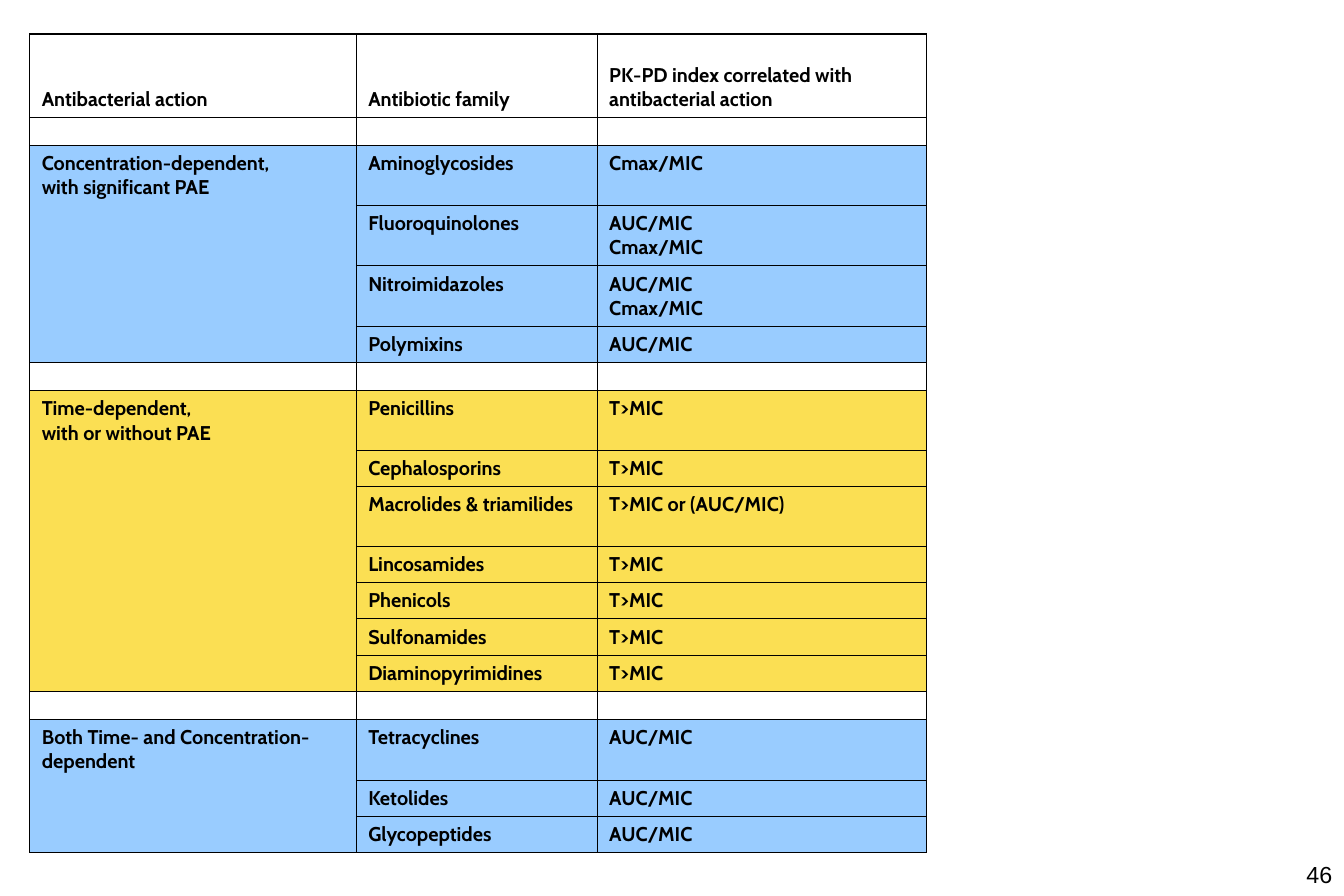
"""Build a slide with a table of antibiotic families and their PK-PD indices."""
import pptx
import pptx.util
import pptx.dml.color
import pptx.enum.text
import pptx.oxml.ns
import lxml.etree

PX = pptx.util.Inches(1) // 120
BLACK = pptx.dml.color.RGBColor(0x00, 0x00, 0x00)
BLUE = pptx.dml.color.RGBColor(0x99, 0xCC, 0xFF)
YELLOW = pptx.dml.color.RGBColor(0xFB, 0xDF, 0x53)

HEADER, SPACER, TALL, SHORT = 84, 28, 60, 36
COL_WIDTHS = [328, 242, 331]
HEADINGS = ["Antibacterial action", "Antibiotic family",
            "PK-PD index correlated with antibacterial action"]
GROUPS = [
    ("Concentration-dependent,\nwith significant PAE", BLUE, [
        ("Aminoglycosides", "Cmax/MIC", TALL),
        ("Fluoroquinolones", "AUC/MIC\nCmax/MIC", TALL),
        ("Nitroimidazoles", "AUC/MIC\nCmax/MIC", TALL),
        ("Polymixins", "AUC/MIC", SHORT),
    ]),
    ("Time-dependent,\nwith or without PAE", YELLOW, [
        ("Penicillins", "T>MIC", TALL),
        ("Cephalosporins", "T>MIC", SHORT),
        ("Macrolides & triamilides", "T>MIC or (AUC/MIC)", TALL),
        ("Lincosamides", "T>MIC", SHORT),
        ("Phenicols", "T>MIC", SHORT),
        ("Sulfonamides", "T>MIC", SHORT),
        ("Diaminopyrimidines", "T>MIC", SHORT),
    ]),
    ("Both Time- and Concentration-dependent", BLUE, [
        ("Tetracyclines", "AUC/MIC", TALL + 1),
        ("Ketolides", "AUC/MIC", SHORT),
        ("Glycopeptides", "AUC/MIC", SHORT),
    ]),
]


def add_border(cell, side, width):
    tag = pptx.oxml.ns.qn
    tcPr = cell._tc.get_or_add_tcPr()
    ln = lxml.etree.SubElement(tcPr, tag("a:ln" + side), w=str(pptx.util.Pt(width)))
    fill = lxml.etree.SubElement(ln, tag("a:solidFill"))
    lxml.etree.SubElement(fill, tag("a:srgbClr"), val=str(BLACK))


def style_font(font, name, size, bold):
    font.name = name
    font.size = pptx.util.Pt(size)
    font.bold = bold
    font.color.rgb = BLACK


rows = [(HEADINGS, None, HEADER)]
merges = []
for action, color, families in GROUPS:
    rows.append((["", "", ""], None, SPACER))
    merges.append((len(rows), len(rows) + len(families) - 1))
    for i, (family, index, height) in enumerate(families):
        rows.append(([action if i == 0 else "", family, index], color, height))

prs = pptx.Presentation()
prs.slide_width = 1350 * PX
prs.slide_height = 900 * PX
s = prs.slides.add_slide(prs.slide_layouts[6])

frame = s.shapes.add_table(len(rows), len(COL_WIDTHS), 30 * PX, 34 * PX,
                           sum(COL_WIDTHS) * PX, sum(row[2] for row in rows) * PX)
table = frame.table
table.first_row = False
table.horz_banding = False
for column, width in zip(table.columns, COL_WIDTHS):
    column.width = width * PX

for r, (texts, color, height) in enumerate(rows):
    table.rows[r].height = height * PX
    for c, text in enumerate(texts):
        cell = table.cell(r, c)
        for side in "LRTB":
            outer = (r == 0 and side == "T") or (r == len(rows) - 1 and side == "B")
            add_border(cell, side, 1 if outer else 0.75)
        if color:
            cell.fill.solid()
            cell.fill.fore_color.rgb = color
        else:
            cell.fill.background()
        if r == 0:
            cell.vertical_anchor = pptx.enum.text.MSO_ANCHOR.BOTTOM
        if text:
            cell.text = text
            for p in cell.text_frame.paragraphs:
                style_font(p.font, "Cabin", 12, True)
        else:
            p = cell.text_frame.paragraphs[0]
            lxml.etree.SubElement(p._p, pptx.oxml.ns.qn("a:endParaRPr"), sz="600")

for first, last in merges:
    table.cell(first, 0).merge(table.cell(last, 0))

sp = s.shapes.add_textbox(1001 * PX, 858 * PX, 349 * PX, 42 * PX)
tf = sp.text_frame
tf.word_wrap = True
p = tf.paragraphs[0]
p.text = "46"
p.alignment = pptx.enum.text.PP_ALIGN.RIGHT
style_font(p.font, "Arial", 14, False)

prs.save("out.pptx")
